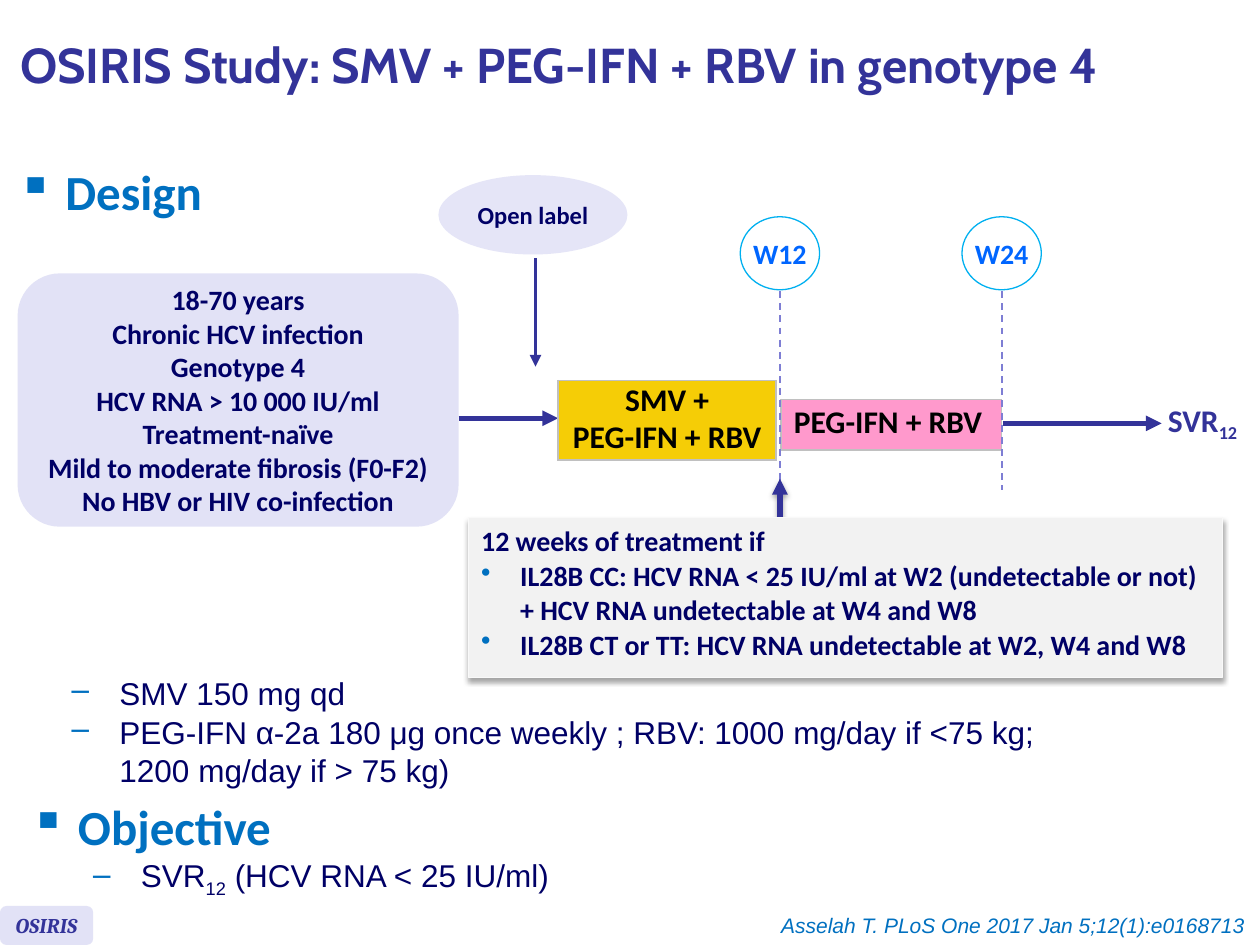
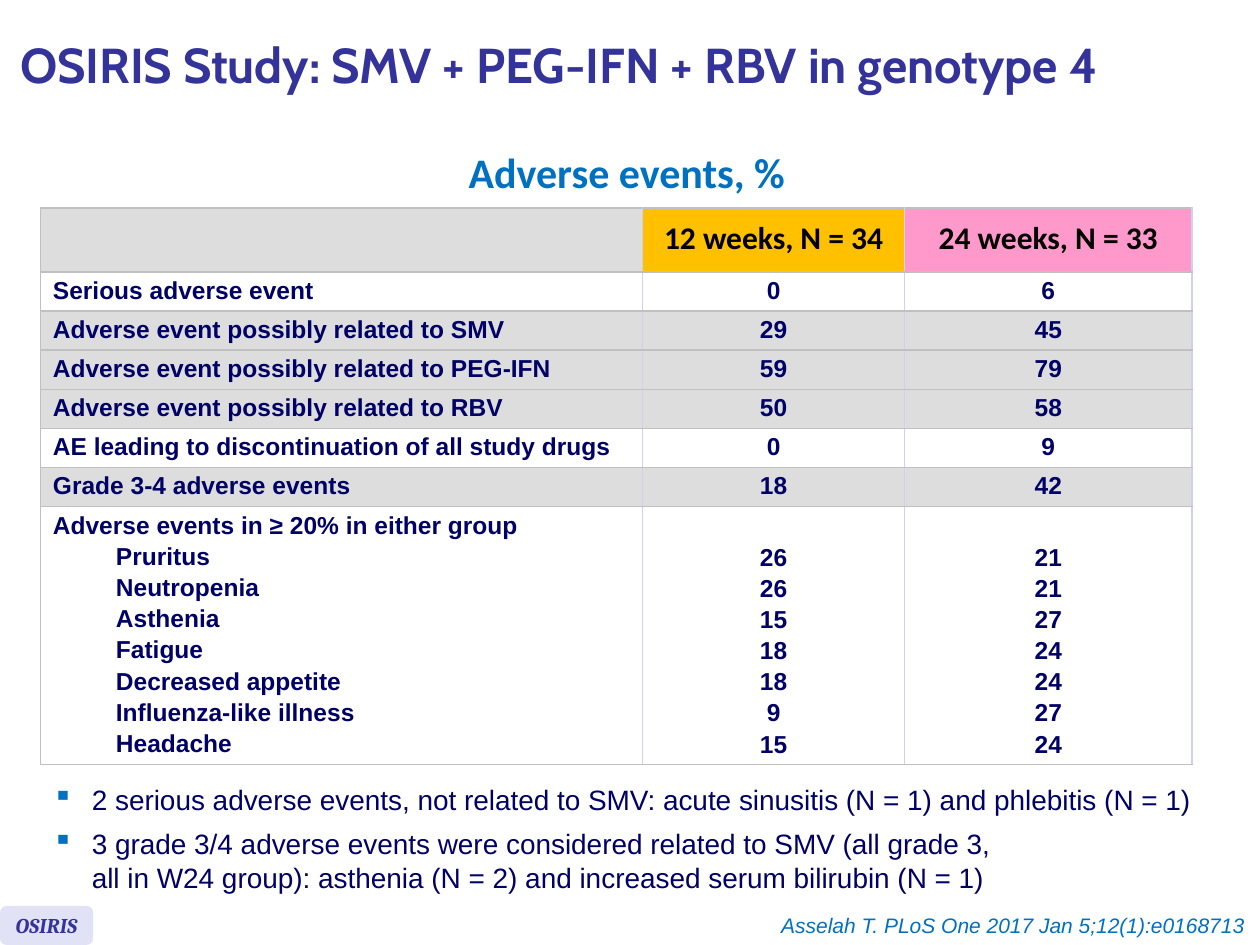
from dataclasses import dataclass

from lxml.etree import SubElement
from pptx import Presentation
from pptx.dml.color import RGBColor
from pptx.enum.dml import MSO_LINE
from pptx.enum.shapes import MSO_CONNECTOR, MSO_SHAPE
from pptx.enum.text import MSO_ANCHOR, MSO_AUTO_SIZE, PP_ALIGN
from pptx.oxml.ns import qn
from pptx.util import Inches, Pt

COLORS = {
    "indigo": "333399", "navy": "000066", "blue": "0070C0", "week": "0066FF",
    "cyan": "00B0F0", "dash": "7E7ED4", "lavender": "E2E2F6", "pale": "E5E5F7",
    "yellow": "F5CD06", "amber": "FFC000", "pink": "FF99CC", "black": "000000",
    "white": "FFFFFF", "panel": "F2F2F2", "panel_edge": "F9F9F9",
    "gray": "DDDDDD", "rule": "C0C0C0", "column_rule": "D0D0F0",
}
COLUMNS, ROWS = 100, 75
WIDTH, HEIGHT = Inches(10), Inches(7.5)
CENTER, RIGHT = PP_ALIGN.CENTER, PP_ALIGN.RIGHT
HEADING = dict(font="Calibri", size=28, color="blue", bold=True, bullet="▪", indent=0.38, hanging=0.38)
DETAIL = dict(font="Arial", size=18, color="navy", bold=False, bullet="–", indent=0.88, hanging=0.38)
LABEL = dict(font="Calibri", size=16, color="navy", bold=True)
REGIMEN = dict(font="Calibri", size=18, color="black", bold=True)


@dataclass
class Box:
    """A region measured in grid columns and rows."""
    left: float
    top: float
    width: float
    height: float

    def area(self, left, top, width, height):
        """Return a box placed from this box's top left corner."""
        return Box(self.left + left, self.top + top, width, height)

    def emu(self):
        """Return left, top, width and height in slide units."""
        return (column(self.left), row(self.top), column(self.width), row(self.height))


def column(count):
    """Convert grid columns to a length."""
    return round(WIDTH * count / COLUMNS)


def row(count):
    """Convert grid rows to a length."""
    return round(HEIGHT * count / ROWS)


def rgb(name):
    """Look up a named colour."""
    return RGBColor.from_string(COLORS[name])


def add_bullet(paragraph, bullet):
    """Give a paragraph a blue bullet character."""
    properties = paragraph._p.get_or_add_pPr()
    SubElement(SubElement(properties, qn("a:buClr")), qn("a:srgbClr")).set("val", COLORS["blue"])
    SubElement(properties, qn("a:buChar")).set("char", bullet)


def format_paragraph(paragraph, text, font="Calibri", size=16, color="navy", bold=False,
                     italic=False, align=PP_ALIGN.LEFT, spacing=None, before=0, after=0,
                     bullet=None, indent=0, hanging=0):
    """Fill one paragraph; text between tildes is set as subscript."""
    properties = paragraph._p.get_or_add_pPr()
    properties.set("marL", str(Inches(indent)))
    properties.set("indent", str(-Inches(hanging)))
    if bullet:
        add_bullet(paragraph, bullet)
    paragraph.alignment = align
    paragraph.space_before, paragraph.space_after = Pt(before), Pt(after)
    if spacing:
        paragraph.line_spacing = spacing
    for line_index, line in enumerate(text.split("\n")):
        if line_index:
            paragraph.add_line_break()
        for index, piece in enumerate(line.split("~")):
            if not piece:
                continue
            run = paragraph.add_run()
            run.text = piece
            run.font.name, run.font.size = font, Pt(size)
            run.font.bold, run.font.italic = bold, italic
            run.font.color.rgb = rgb(color)
            if index % 2:
                run.font._element.set("baseline", "-25000")


def write(frame, lines, anchor=MSO_ANCHOR.TOP, wrap=True, **style):
    """Write lines, each a text or a (text, overrides) pair, into a text frame."""
    frame.word_wrap = wrap
    frame.vertical_anchor = anchor
    for index, line in enumerate([lines] if isinstance(lines, str) else lines):
        text, overrides = (line, {}) if isinstance(line, str) else line
        paragraph = frame.add_paragraph() if index else frame.paragraphs[0]
        settings = {**style, **overrides}
        if not index:
            settings["before"] = 0
        format_paragraph(paragraph, text, **settings)


def add_text(slide, box, lines, **style):
    """Add a text box."""
    write(slide.shapes.add_textbox(*box.emu()).text_frame, lines, **style)


def add_panel(slide, preset, box, lines, fill, edge=None, **style):
    """Add a filled preset shape holding text."""
    panel = slide.shapes.add_shape(preset, *box.emu())
    panel.shadow.inherit = False
    panel.fill.solid()
    panel.fill.fore_color.rgb = rgb(fill)
    if edge:
        panel.line.color.rgb = rgb(edge)
        panel.line.width = Pt(0.75)
    else:
        panel.line.fill.background()
    write(panel.text_frame, lines, **style)
    return panel


def add_shadow(effects, opacity, distance):
    """Add a soft downward shadow to an effect list."""
    shadow = SubElement(effects, qn("a:outerShdw"), blurRad=str(Pt(3.1)),
                        dist=str(Pt(distance)), dir="5400000", rotWithShape="0")
    tint = SubElement(shadow, qn("a:srgbClr"), val=COLORS["black"])
    SubElement(tint, qn("a:alpha"), val=str(opacity * 1000))


def add_line(slide, box, color="indigo", width=3, arrow=True):
    """Draw an arrow or dashed line across a box and return its effect list."""
    line = slide.shapes.add_connector(
        MSO_CONNECTOR.STRAIGHT, column(box.left), row(box.top),
        column(box.left + box.width), row(box.top + box.height))
    line.line.color.rgb = rgb(color)
    line.line.width = Pt(width)
    if arrow:
        SubElement(line.line._get_or_add_ln(), qn("a:tailEnd"), type="triangle")
    else:
        line.line.dash_style = MSO_LINE.DASH
    return SubElement(line._element.spPr, qn("a:effectLst"))


def add_grid(slide, box, widths, heights):
    """Add a plain table with the given column widths and row heights."""
    table = slide.shapes.add_table(len(heights), len(widths), *box.emu()).table
    table.first_row = table.horz_banding = False
    for table_column, width in zip(table.columns, widths):
        table_column.width = column(width)
    for table_row, height in zip(table.rows, heights):
        table_row.height = row(height)
    return table


def fill_cell(cell, lines, fill, left="rule", right="rule", anchor=MSO_ANCHOR.MIDDLE, **style):
    """Set a cell's borders, fill and text."""
    properties = cell._tc.get_or_add_tcPr()
    for side, color in (("L", left), ("R", right), ("T", "rule"), ("B", "rule")):
        border = SubElement(properties, qn(f"a:ln{side}"), w=str(Pt(1)))
        SubElement(SubElement(border, qn("a:solidFill")), qn("a:srgbClr"), val=COLORS[color])
    cell.fill.solid()
    cell.fill.fore_color.rgb = rgb(fill)
    write(cell.text_frame, lines, **style)
    cell.vertical_anchor = anchor


def add_regimen(slide, box, lines, fill, **style):
    """Add a one-cell treatment block."""
    block = add_grid(slide, box, [box.width], [box.height])
    fill_cell(block.cell(0, 0), lines, fill, spacing=0.8, before=3.6, **REGIMEN, **style)


def add_study_slide(deck):
    """Add a slide with the shared title, study tag and citation."""
    slide = deck.slides.add_slide(deck.slide_layouts[5])
    title = slide.shapes.title
    title.left, title.top, title.width, title.height = Box(0.6, 0.5, 98.3, 9.9).emu()
    title.text_frame.auto_size = MSO_AUTO_SIZE.NONE
    write(title.text_frame, "OSIRIS Study: SMV + PEG-IFN + RBV in genotype 4", font="Cabin",
          size=28, color="indigo", bold=True, spacing=0.85, anchor=MSO_ANCHOR.MIDDLE)
    footer = Box(0, 71.9, COLUMNS, 3.1)
    add_panel(slide, MSO_SHAPE.ROUNDED_RECTANGLE, footer.area(0, 0, 7.4, 3.1), "OSIRIS",
              "lavender", font="Cambria", size=12, color="indigo", bold=True, italic=True,
              align=CENTER, anchor=MSO_ANCHOR.MIDDLE, wrap=False)
    add_text(slide, footer.area(60, 0, 39.8, 3), "Asselah T. PLoS One 2017 Jan 5;12(1):e0168713",
             font="Arial", size=12, color="blue", italic=True, align=RIGHT)
    return slide


def draw_population(slide, box):
    """Place the inclusion criteria and the open-label marker."""
    centered = dict(LABEL, align=CENTER, anchor=MSO_ANCHOR.MIDDLE)
    criteria = ["18-70 years", "Chronic HCV infection", "Genotype 4", "HCV RNA > 10 000 IU/ml",
                "Treatment-naïve", "Mild to moderate fibrosis (F0-F2)",
                "No HBV or HIV co-infection"]
    add_panel(slide, MSO_SHAPE.ROUNDED_RECTANGLE, box.area(0, 7.8, 35, 20.1), criteria,
              "lavender", **centered)
    add_panel(slide, MSO_SHAPE.OVAL, box.area(33.4, 0, 15, 6.3), "Open label", "pale",
              wrap=False, **dict(centered, size=14))
    add_line(slide, box.area(41.1, 6.6, 0, 8.6), width=2.25)
    add_line(slide, box.area(35, 19.3, 7.9, 0))


def draw_schedule(slide, box):
    """Place the treatment blocks, week markers and outcome."""
    add_regimen(slide, box.area(0, 13, 17.3, 6.3), ["SMV +", "PEG-IFN + RBV"], "yellow",
                align=CENTER)
    add_regimen(slide, box.area(17.7, 14.5, 17.5, 4), "PEG-IFN + RBV", "pink")
    for week, center in (("W12", 17.6), ("W24", 35.2)):
        add_line(slide, box.area(center, 5.9, 0, 15.8), color="dash", width=1, arrow=False)
        add_panel(slide, MSO_SHAPE.OVAL, box.area(center - 3.15, 0, 6.3, 5.8), week, "white",
                  edge="cyan", align=CENTER, anchor=MSO_ANCHOR.MIDDLE, wrap=False,
                  **dict(LABEL, color="week"))
    add_line(slide, box.area(35.3, 16.4, 12.6, 0))
    add_text(slide, box.area(47.4, 14.1, 7.8, 4), "SVR~12~", wrap=False,
             **dict(REGIMEN, color="indigo"))


def draw_stopping_rule(slide, box):
    """Place the 12-week rule and the arrow to week 12."""
    point = dict(bullet="•", indent=0.31, hanging=0.31)
    add_shadow(add_line(slide, box.area(24.7, 0, 0, -3.1)), 38, 1.6)
    rule = add_panel(slide, MSO_SHAPE.RECTANGLE, box, [
        "12 weeks of treatment if",
        ("IL28B CC: HCV RNA < 25 IU/ml at W2 (undetectable or not) "
         "+ HCV RNA undetectable at W4 and W8", point),
        ("IL28B CT or TT: HCV RNA undetectable at W2, W4 and W8", point),
    ], "panel", edge="panel_edge", before=0.7, **LABEL)
    add_shadow(rule._element.spPr.find(qn("a:effectLst")), 35, 1.8)


def build_design_slide(deck):
    """Build the study design and objective slide."""
    slide = add_study_slide(deck)
    add_text(slide, Box(0.4, 12.3, 19.8, 6.3), "Design", **HEADING)
    draw_population(slide, Box(1.4, 13.9, 50, 28))
    draw_schedule(slide, Box(44.3, 17.2, 55, 22))
    draw_stopping_rule(slide, Box(37.2, 41.1, 59.8, 12.7))
    add_text(slide, Box(-0.3, 53, 88, 7.4), [
        "SMV 150 mg qd",
        "PEG-IFN α-2a 180 μg once weekly ; RBV: 1000 mg/day if <75 kg; 1200 mg/day if > 75 kg)",
    ], before=0.7, **DETAIL)
    add_text(slide, Box(1.4, 62.7, 98.5, 9.2),
             ["Objective", ("SVR~12~ (HCV RNA < 25 IU/ml)", DETAIL)], before=0.7, **HEADING)


def draw_adverse_events(slide, box):
    """Place the adverse event table."""
    single_events = [
        ("Serious adverse event", "0", "6", "white"),
        ("Adverse event possibly related to SMV", "29", "45", "gray"),
        ("Adverse event possibly related to PEG-IFN", "59", "79", "gray"),
        ("Adverse event possibly related to RBV", "50", "58", "gray"),
        ("AE leading to discontinuation of all study drugs", "0", "9", "white"),
        ("Grade 3-4 adverse events", "18", "42", "gray"),
    ]
    common_events = [
        ("Pruritus", "26", "21"), ("Neutropenia", "26", "21"), ("Asthenia", "15", "27"),
        ("Fatigue", "18", "24"), ("Decreased appetite", "18", "24"),
        ("Influenza-like illness", "9", "27"), ("Headache", "15", "24"),
    ]
    names, short_arm, long_arm = zip(*common_events)
    common_labels = ["Adverse events in ≥ 20% in either group",
                     *((name, dict(indent=0.5)) for name in names)]
    body = [*single_events, (common_labels, short_arm, long_arm, "white")]
    table = add_grid(slide, box, [47.8, 20.8, 22.8], [5.1] + [3.1] * len(single_events) + [20.5])
    fill_cell(table.cell(0, 0), [], "gray", right="column_rule")
    arms = [("12 weeks, N = 34", "amber"), ("24 weeks, N = 33", "pink")]
    for index, (arm, fill) in enumerate(arms, 1):
        fill_cell(table.cell(0, index), arm, fill, "column_rule", "column_rule",
                  align=CENTER, spacing=Pt(21), **REGIMEN)
    entry = dict(font="Arial", size=14, bold=True, spacing=Pt(15), before=2.8)
    for row_index, (label, *values, fill) in enumerate(body, 1):
        fill_cell(table.cell(row_index, 0), label, fill, right="column_rule", **entry)
        anchor = MSO_ANCHOR.MIDDLE if isinstance(label, str) else MSO_ANCHOR.BOTTOM
        for index, value in enumerate(values, 1):
            fill_cell(table.cell(row_index, index), value, fill, "column_rule", "column_rule",
                      anchor=anchor, align=CENTER, **entry)


def build_safety_slide(deck):
    """Build the adverse events slide."""
    slide = add_study_slide(deck)
    draw_adverse_events(slide, Box(3.2, 16.5, 91.4, 44.2))
    add_text(slide, Box(10.6, 13, 78.3, 3.5), "Adverse events, %", size=24, color="blue",
             bold=True, align=CENTER, spacing=Pt(15.2))
    add_text(slide, Box(3.2, 61.6, 93.9, 9.9), [
        "2 serious adverse events, not related to SMV: acute sinusitis (N = 1) and phlebitis (N = 1)",
        "3 grade 3/4 adverse events were considered related to SMV (all grade 3,\n"
        "all in W24 group): asthenia (N = 2) and increased serum bilirubin (N = 1)",
    ], font="Arial", after=6, bullet="▪", indent=0.31, hanging=0.31)


def main():
    """Build and save the deck."""
    deck = Presentation()
    deck.slide_width, deck.slide_height = WIDTH, HEIGHT
    build_design_slide(deck)
    build_safety_slide(deck)
    deck.save("out.pptx")


if __name__ == "__main__":
    main()
